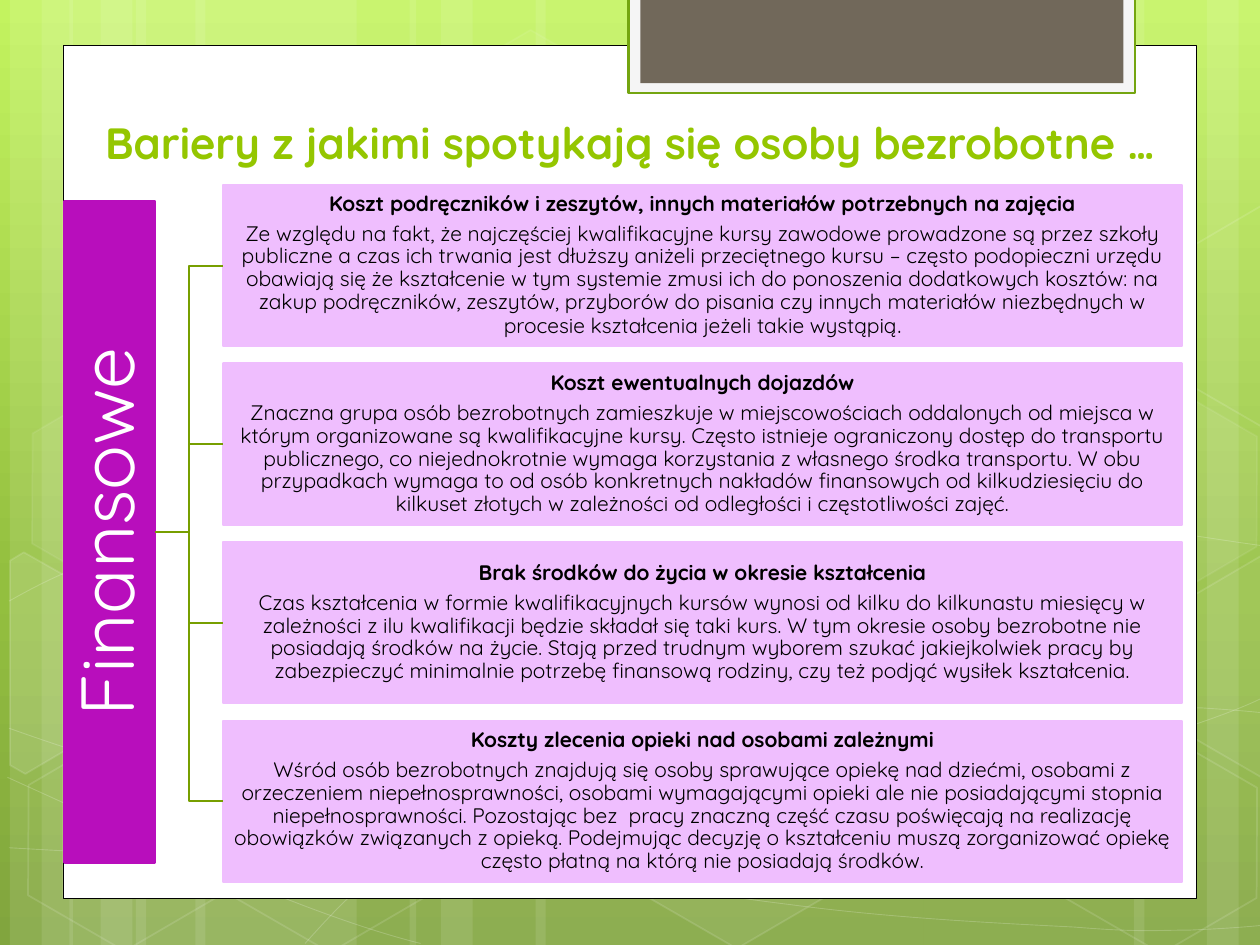
import copy
import math

import pptx
import pptx.dml.color
import pptx.enum.shapes
import pptx.enum.text
import pptx.oxml
import pptx.oxml.ns
import pptx.util
from lxml import etree

Cm = pptx.util.Cm
Pt = pptx.util.Pt
qn = pptx.oxml.ns.qn
FONT = "Quicksand"
COLORS = {
    "sky": "C3F35F", "meadow": "93BF3F", "moss": "81A53E",
    "white": "FFFFFF", "black": "000000", "tab": "F5F5F5",
    "tab_edge": "74A510", "taupe": "71685A", "title": "94C600",
    "branch": "779F00", "label": "B80EBC", "card": "EFBEFE",
}
BANDS = [
    (2.74, 4.45), (0.2, 1.27), (0.84, 2.11), (3.94, 4.45), (1.4, 1.27), (2.03, 2.11),
    (18.62, 4.45), (24.33, 1.27), (22.86, 2.11), (10.8, 7.82), (8.26, 1.27), (8.89, 2.11),
]
CURVES = [
    [(0.18, 17.09), (1.55, 17.17), (2.92, 17.25), (4.83, 17.22), (6.73, 17.2), (9.09, 17.15),
     (11.63, 16.89), (14.17, 16.64), (17.78, 16.15), (20.12, 15.67), (22.43, 15.19),
     (24.82, 14.43), (25.58, 14)],
    [(0.18, 12.12), (0.91, 11.71), (1.65, 11.33), (3.07, 10.95), (4.52, 10.57), (6.58, 10.01),
     (8.81, 9.83), (11.07, 9.65), (13.82, 9.63), (16.61, 9.83), (19.41, 10.03),
     (24.05, 10.82), (25.58, 11.02)],
    [(0.15, 15.67), (3.23, 17.07), (6.27, 18.47), (8.48, 19.02)],
    [(0.18, 14.68), (0.97, 14.96), (1.78, 15.24), (3.25, 15.65), (4.72, 16.03), (6.93, 16.66),
     (9.07, 17.09), (11.18, 17.53), (13.84, 17.98), (15.95, 18.24), (18.06, 18.52),
     (20.32, 18.62), (21.67, 18.69), (22.99, 18.8), (23.34, 18.75), (24, 18.75),
     (24.66, 18.72), (25.12, 18.69), (25.58, 18.64)],
    [(6.15, 19.02), (6.6, 18.52), (7.06, 18.01), (7.67, 17.55), (8.28, 17.09), (9.14, 16.59),
     (9.86, 16.23), (10.57, 15.88), (11, 15.72), (11.94, 15.47), (12.85, 15.21),
     (14.55, 14.86), (15.44, 14.68), (16.36, 14.5), (16.48, 14.5), (17.27, 14.45),
     (18.06, 14.38), (19.3, 14.3), (20.17, 14.27), (21.06, 14.25), (22.5, 14.27),
     (22.5, 14.27), (22.5, 14.27), (24.21, 14.27), (24.21, 14.27), (24.66, 14.3),
     (25.1, 14.33), (25.55, 14.38)],
]
HEXAGONS = [
    (8.48, 0.91, 4, 8), (12.62, 14.96, 6, 12), (0.28, 15.01, 0, 12), (0.36, 7.92, 7, 8),
    (4.42, 15.04, 0, 12), (19.13, 11.51, 10, 12), (21.18, 15.06, 0, 12), (21.18, 7.98, 7, 8),
]
CUT_HEXAGONS = [
    (10, (0.91, 13.59), [(0.2, 11.3), (0.48, 11.13), (2.44, 12.24), (2.41, 14.48), (0.51, 15.6), (0.2, 15.42)]),
    (4, (25.02, 13.21), [(23.52, 12.32), (25.43, 11.2), (25.63, 11.33), (25.63, 15.57), (25.45, 15.67), (23.52, 14.55)]),
    (0, (25.02, 6.12), [(23.52, 5.26), (25.43, 4.14), (25.65, 4.27), (25.63, 8.51), (25.45, 8.61), (23.52, 7.49)]),
]
BARRIERS = [
    ("Koszt podręczników i zeszytów, innych materiałów potrzebnych na zajęcia",
     "Ze względu na fakt, że najczęściej kwalifikacyjne kursy zawodowe prowadzone są przez szkoły publiczne a czas ich trwania jest dłuższy aniżeli przeciętnego kursu – często podopieczni urzędu obawiają się że kształcenie w tym systemie zmusi ich do ponoszenia dodatkowych kosztów: na zakup podręczników, zeszytów, przyborów do pisania czy innych materiałów niezbędnych w procesie kształcenia jeżeli takie wystąpią", 13),
    ("Koszt ewentualnych dojazdów",
     "Znaczna grupa osób bezrobotnych zamieszkuje w miejscowościach oddalonych od miejsca w którym organizowane są kwalifikacyjne kursy. Często istnieje ograniczony dostęp do transportu publicznego, co niejednokrotnie wymaga korzystania z własnego środka transportu. W obu przypadkach wymaga to od osób konkretnych nakładów finansowych od kilkudziesięciu do kilkuset złotych w zależności od odległości i częstotliwości zajęć.", None),
    ("Brak środków do życia w okresie kształcenia",
     "Czas kształcenia w formie kwalifikacyjnych kursów wynosi od kilku do kilkunastu miesięcy w zależności z ilu kwalifikacji będzie składał się taki kurs. W tym okresie osoby bezrobotne nie posiadają środków na życie. Stają przed trudnym wyborem szukać jakiejkolwiek pracy by zabezpieczyć minimalnie potrzebę finansową rodziny, czy też podjąć wysiłek kształcenia.", None),
    ("Koszty zlecenia opieki nad osobami zależnymi",
     "Wśród osób bezrobotnych znajdują się osoby sprawujące opiekę nad dziećmi, osobami z orzeczeniem niepełnosprawności, osobami wymagającymi opieki ale nie posiadającymi stopnia niepełnosprawności. Pozostając bez  pracy znaczną część czasu poświęcają na realizację obowiązków związanych z opieką. Podejmując decyzję o kształceniu muszą zorganizować opiekę często płatną na którą nie posiadają środków.", None),
]


def rgb(name):
    """Return the named colour."""
    return pptx.dml.color.RGBColor.from_string(COLORS[name])


def paint(fill, parent, name, opacity):
    """Fill with a named colour at an opacity in percent, or with nothing at zero."""
    if not name or not opacity:
        fill.background()
        return
    fill.solid()
    fill.fore_color.rgb = rgb(name)
    if opacity < 100:
        color = parent.find(qn("a:solidFill")).find(qn("a:srgbClr"))
        etree.SubElement(color, qn("a:alpha")).set("val", str(opacity * 1000))


def style(shape, fill=None, opacity=100, line=None, width=1.25, line_opacity=100):
    """Give a shape its fill and outline, without a shadow."""
    shape.shadow.inherit = False
    properties = shape._element.spPr
    paint(shape.fill, properties, fill, opacity)
    shape.line.width = Pt(width)
    paint(shape.line.fill, properties.find(qn("a:ln")), line, line_opacity)


def add_box(slide, box, kind="RECTANGLE", **look):
    """Add a styled preset shape in a box given in centimetres."""
    preset = pptx.enum.shapes.MSO_SHAPE[kind]
    shape = slide.shapes.add_shape(preset, *(Cm(value) for value in box))
    style(shape, **look)
    return shape


def add_outline(slide, points, close, **look):
    """Add a styled freeform through points given in centimetres."""
    corners = [(Cm(x), Cm(y)) for x, y in points]
    builder = slide.shapes.build_freeform(*corners[0])
    builder.add_line_segments(corners[1:], close=close)
    shape = builder.convert_to_shape()
    style(shape, **look)
    return shape


def bend(shape):
    """Turn each three line segments of a freeform into one cubic curve."""
    segments = list(shape._element.iter(qn("a:lnTo")))
    for start in range(0, len(segments), 3):
        first, *others = segments[start:start + 3]
        first.tag = qn("a:cubicBezTo")
        for other in others:
            first.append(other[0])
            other.getparent().remove(other)


def turn(points, center, degrees):
    """Return points turned clockwise about a center."""
    cosine, sine = math.cos(math.radians(degrees)), math.sin(math.radians(degrees))
    offsets = [(x - center[0], y - center[1]) for x, y in points]
    return [(center[0] + x * cosine - y * sine, center[1] + x * sine + y * cosine) for x, y in offsets]


def add_backdrop(slide, height):
    """Draw the green gradient with its bands, curves and hexagons."""
    fill = slide.background.fill
    fill.gradient()
    fill.gradient_angle = 270
    stops = next(slide._element.iter(qn("a:gsLst")))
    stops.append(copy.deepcopy(stops[-1]))
    for stop, position, name in zip(fill.gradient_stops, (0, 0.62, 1), ("sky", "meadow", "moss")):
        stop.position = position
        stop.color.rgb = rgb(name)
    for left, width in BANDS:
        add_box(slide, (left, 0, width, height), fill="white", opacity=10)
    for controls in CURVES:
        bend(add_outline(slide, controls, False, line="white", width=0.5, line_opacity=20))
    for left, top, opacity, line_opacity in HEXAGONS:
        hexagon = add_box(slide, (left, top, 4.45, 3.86), "HEXAGON", fill="white", opacity=opacity,
                          line="white", width=1, line_opacity=line_opacity)
        hexagon.adjustments[0] = 0.285
        hexagon.rotation = 30
    for opacity, center, points in CUT_HEXAGONS:
        hexagon = add_outline(slide, turn(points, center, -30), True, fill="white", opacity=opacity,
                              line="white", width=1, line_opacity=12)
        hexagon.rotation = 30


def add_panel(slide, left, top, width, height):
    """Draw the white panel and the tab hanging over its top edge."""
    add_box(slide, (left, top, width, height), fill="white", line="black", width=0.5)
    add_box(slide, (left + 11.4, -0.05, 10.21, 1.93), fill="tab", line="tab_edge")
    add_box(slide, (left + 11.64, -0.05, 9.74, 1.73), fill="taupe")


def write(frame, texts, size, color, anchor="MIDDLE", inset=0.03, spacing=0.9):
    """Write centred paragraphs into a text frame and return them."""
    frame.word_wrap = True
    frame.auto_size = pptx.enum.text.MSO_AUTO_SIZE.NONE
    frame.vertical_anchor = pptx.enum.text.MSO_ANCHOR[anchor]
    frame.margin_left = frame.margin_right = frame.margin_top = frame.margin_bottom = Cm(inset)
    frame.text = "\n".join(texts)
    for paragraph in frame.paragraphs:
        paragraph.alignment = pptx.enum.text.PP_ALIGN.CENTER
        paragraph.line_spacing = spacing
        paragraph.font.name = FONT
        paragraph.font.size = Pt(size)
        paragraph.font.color.rgb = rgb(color)
    return frame.paragraphs


def add_title(slide, left, top, width, height):
    """Place the title above the cards."""
    title = slide.shapes.title
    title._element.getparent().append(title._element)
    title.left, title.top, title.width, title.height = Cm(left), Cm(top), Cm(width), Cm(height)
    text = "Bariery z jakimi spotykają się osoby bezrobotne …"
    paragraphs = write(title.text_frame, [text], 25, "title", "BOTTOM", 0.13, 1.0)
    paragraphs[0].font.bold = True


def add_branch(slide, label, card):
    """Join the label to a card with an elbow connector."""
    branch = slide.shapes.add_connector(pptx.enum.shapes.MSO_CONNECTOR.ELBOW, 0, 0, 0, 0)
    branch.begin_connect(label, 3)
    branch.end_connect(card, 1)
    branch.line.width = Pt(1.25)
    branch.line.color.rgb = rgb("branch")
    etree.SubElement(branch._element.spPr, qn("a:effectLst"))


def add_barriers(slide, left, top, width, card_height, step):
    """Draw the upright label and the cards that branch from it."""
    label = add_box(slide, (left, top + 0.32, 1.83, 13.34), fill="label", line="label")
    write(label.text_frame, ["Finansowe"], 43, "white", inset=0.08)
    label.text_frame._txBody.bodyPr.set("vert", "vert270")
    for row, (heading, body, stop_size) in enumerate(BARRIERS):
        box = (left + 3.2, top + row * step, width - 3.2, card_height)
        card = add_box(slide, box, fill="card", line="card")
        paragraphs = write(card.text_frame, (heading, body), 12, "black")
        paragraphs[0].font.bold = True
        for paragraph in paragraphs:
            paragraph.space_after = Pt(4.2)
        if stop_size:
            stop = paragraphs[1].add_run()
            stop.text = "."
            stop.font.size = Pt(stop_size)
        add_branch(slide, label, card)


def main():
    """Build and save the slide."""
    presentation = pptx.Presentation()
    presentation.slide_width, presentation.slide_height = Cm(25.4), Cm(19.05)
    slide = presentation.slides.add_slide(presentation.slide_layouts.get_by_name("Title Only"))
    add_backdrop(slide, 19.05)
    add_panel(slide, 1.27, 0.91, 22.86, 17.2)
    add_title(slide, 1.5, 2.13, 22.4, 1.4)
    add_barriers(slide, 1.3, 3.73, 22.53, 3.25, 3.6)
    presentation.save("out.pptx")


if __name__ == "__main__":
    main()
